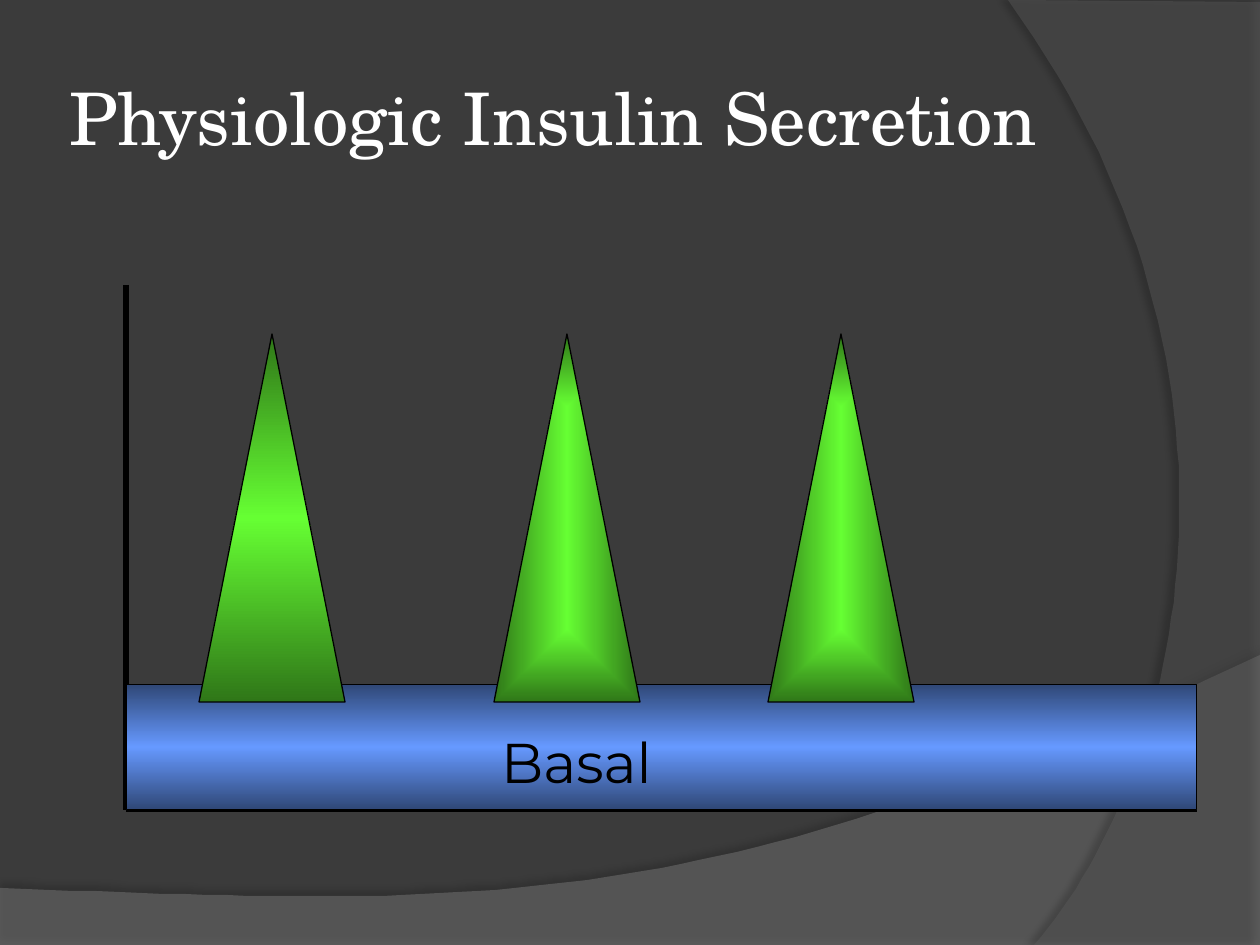
from pptx import Presentation, util as u
from pptx.dml.color import RGBColor
from pptx.enum import shapes, text
from pptx.oxml import parse_xml
from pptx.oxml.ns import nsdecls, qn

SCALE = 914400 / 126  # EMU per px
BLACK, WHITE, SLATE = "000000", "FFFFFF", "3B3B3B"
BLUE, DARK_BLUE = "6699FF", "2F4776"
GREEN, DARK_GREEN = "66FF33", "2F7618"


def px(n):
    return u.Emu(round(n * SCALE))


def rgb(color):
    return RGBColor.from_string(color)


def xml(tag, body, attrs=""):
    return parse_xml(f"<a:{tag} {nsdecls('a')} {attrs}>{body}</a:{tag}>")


def solid(color, opacity=100):
    return (f'<a:solidFill><a:srgbClr val="{color}"><a:alpha val="{opacity * 1000}"/>'
            '</a:srgbClr></a:solidFill>')


def write(tf, words, font, size, color, align=text.PP_ALIGN.LEFT,
          anchor=text.MSO_ANCHOR.TOP, wrap=True):
    tf.word_wrap, tf.vertical_anchor = wrap, anchor
    tf.auto_size = text.MSO_AUTO_SIZE.NONE
    p = tf.paragraphs[0]
    p.alignment = align
    r = p.add_run()
    r.text = words
    r.font.name, r.font.size = font, u.Pt(size)
    r.font.color.rgb = rgb(color)
    return r


def bezier(p0, p1, p2, p3, steps=60):
    """Points along a cubic curve, without its start."""
    for i in range(1, steps + 1):
        t = i / steps
        k = 1 - t
        yield tuple(k**3 * a + 3 * k * k * t * b + 3 * k * t * t * c + t**3 * d
                    for a, b, c, d in zip(p0, p1, p2, p3))


class Deck:
    title_font, label_font = "TeX Gyre Schola", "Montserrat"

    def __init__(self, prs):
        self.s = prs.slides.add_slide(prs.slide_layouts[5])
        fill = self.s.background.fill
        fill.solid()
        fill.fore_color.rgb = rgb(SLATE)

    def title(self, words, x, y, w, h):
        sp = self.s.shapes.title
        sp.left, sp.top, sp.width, sp.height = map(px, (x, y, w, h))
        tf = sp.text_frame
        tf.margin_left = tf.margin_right = u.Inches(0.05)
        tf.margin_top = tf.margin_bottom = u.Inches(0.05)
        write(tf, words, self.title_font, 41.4, WHITE, anchor=text.MSO_ANCHOR.MIDDLE)
        self.s.shapes._spTree.append(sp._element)  # in front of the swooshes

    def swoosh(self, corners, c1, c2, end, color, opacity, shadow):
        """Translucent outline whose last side is a curve."""
        points = corners + list(bezier(corners[-1], c1, c2, end))
        fb = self.s.shapes.build_freeform(*points[0], scale=SCALE)
        fb.add_line_segments(points[1:], close=True)
        sp = fb.convert_to_shape()
        sp.line.fill.background()
        sp.fill.solid()
        sp.fill.fore_color.rgb = rgb(color)
        props = sp._element.spPr
        props.replace(props.find(qn("a:solidFill")), xml("solidFill", solid(color, opacity)
                      .removeprefix("<a:solidFill>").removesuffix("</a:solidFill>")))
        alpha, dist, angle = shadow
        props.append(xml("effectLst", (
            f'<a:outerShdw blurRad="{u.Pt(4)}" dist="{u.Pt(dist)}" dir="{angle * 60000}">'
            f'<a:srgbClr val="{BLACK}"><a:alpha val="{alpha * 1000}"/></a:srgbClr>'
            '</a:outerShdw>')))

    def axis(self, x1, y1, x2, y2, width):
        ln = self.s.shapes.add_connector(shapes.MSO_CONNECTOR.STRAIGHT,
                                         *map(px, (x1, y1, x2, y2)))
        ln.line.color.rgb, ln.line.width = rgb(BLACK), u.Pt(width)
        ln._element.spPr.append(xml("effectLst", ""))

    def gradient_shape(self, kind, x, y, w, h, colors, width, from_center=False):
        sp = self.s.shapes.add_shape(kind, *map(px, (x, y, w, h)))
        sp.shadow.inherit = False
        sp.line.color.rgb, sp.line.width = rgb(BLACK), u.Pt(width)
        last = len(colors) - 1
        stops = "".join(f'<a:gs pos="{i * 100000 // last}"><a:srgbClr val="{c}"/></a:gs>'
                        for i, c in enumerate(colors))
        course = ('<a:path path="shape"><a:fillToRect l="50000" t="50000" r="50000" '
                  'b="50000"/></a:path>' if from_center else
                  '<a:lin ang="5400000" scaled="1"/>')
        sp._element.spPr.find(qn("a:prstGeom")).addnext(
            xml("gradFill", f"<a:gsLst>{stops}</a:gsLst>{course}", 'rotWithShape="1"'))

    def outlined_label(self, words, x, y, w, h):
        sp = self.s.shapes.add_textbox(*map(px, (x, y, w, h)))
        r = write(sp.text_frame, words, self.label_font, 32, "B2B2B2",
                  align=text.PP_ALIGN.CENTER, wrap=False)
        props = r.font._element
        props.insert(0, xml("ln", solid(BLACK), f'w="{u.Pt(1)}"'))
        props.find(qn("a:solidFill"))[0].append(xml("alpha", "", 'val="50000"'))


def main():
    prs = Presentation()
    prs.slide_width, prs.slide_height = px(1260), px(945)
    deck = Deck(prs)

    # Background swooshes
    deck.swoosh([(0, 888), (0, 946), (1260, 946), (1260, 655)],
                (704, 919), (493, 906), (0, 888), "7F7F7F", 45, (35, 3.5, 270))
    deck.swoosh([(1260, 2), (1260, 945), (1034, 945)],
                (1178, 780), (1283, 378), (1008, 0), "5E5E5E", 40, (45, 4, 180))

    deck.title("Physiologic Insulin Secretion", 63, 38, 1029, 157)

    # Axes
    left, base, right = 126, 810, 1197
    deck.axis(left, 285, left, base, 3)
    deck.axis(left, base, right, base, 2.25)

    # Basal band and the meal peaks on it
    kinds = shapes.MSO_SHAPE
    deck.gradient_shape(kinds.RECTANGLE, left, base - 126, right - left, 126,
                        [DARK_BLUE, BLUE, DARK_BLUE], 0.5)
    banded, glowing = [DARK_GREEN, GREEN, DARK_GREEN], [GREEN, DARK_GREEN]
    for x, colors in ((199, banded), (494, glowing), (768, glowing)):
        deck.gradient_shape(kinds.ISOSCELES_TRIANGLE, x, 334, 146, 368, colors, 0.75,
                            from_center=colors is glowing)
    deck.outlined_label("Basal", 491, 721, 171, 78)

    prs.save("out.pptx")


if __name__ == "__main__":
    main()
